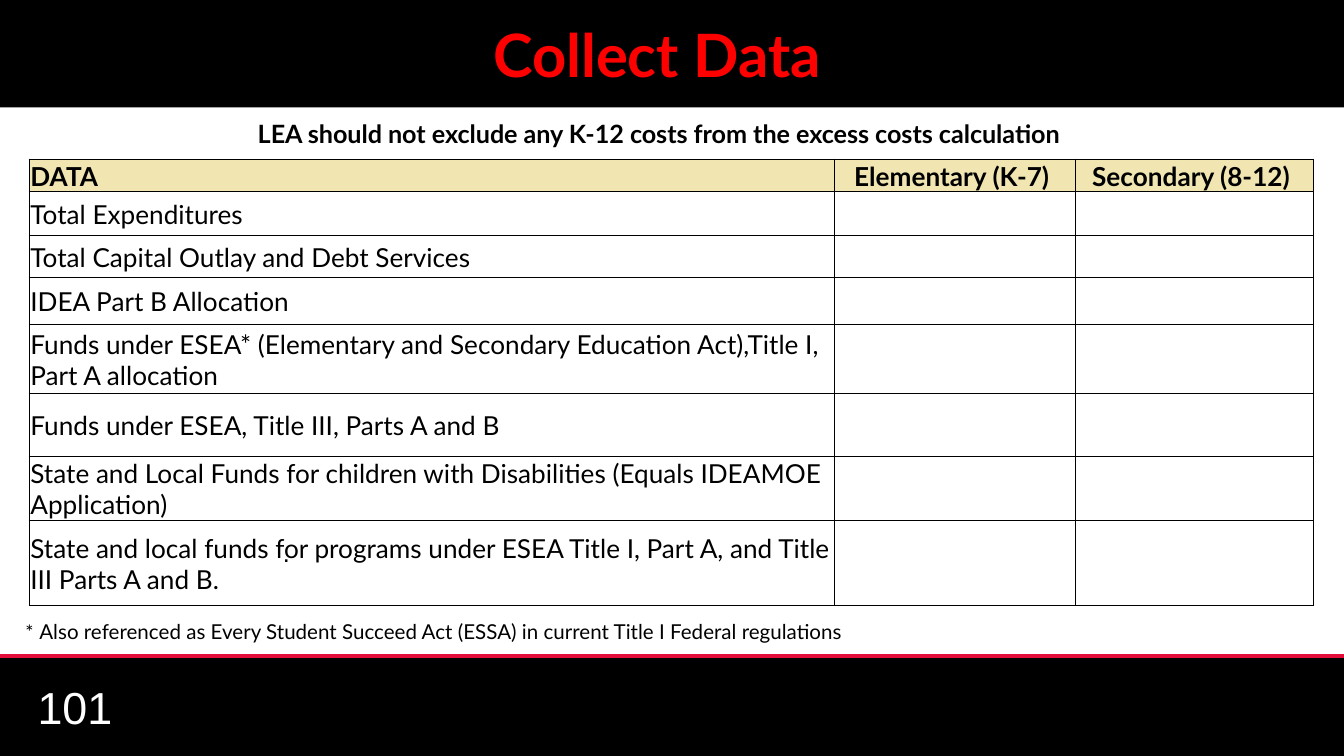
"""Build the Collect Data slide with its excess costs table."""
from lxml import etree
from pptx import Presentation
from pptx.dml.color import RGBColor
from pptx.enum.shapes import MSO_CONNECTOR, MSO_SHAPE
from pptx.enum.text import MSO_ANCHOR, PP_ALIGN
from pptx.oxml.ns import qn
from pptx.util import Pt

BLACK = RGBColor(0x00, 0x00, 0x00)
WHITE = RGBColor(0xFF, 0xFF, 0xFF)
RED = RGBColor(0xFF, 0x00, 0x00)
CRIMSON = RGBColor(0xE2, 0x0D, 0x38)
SAND = RGBColor(0xF1, 0xE6, 0xB2)
CENTER, LEFT = PP_ALIGN.CENTER, PP_ALIGN.LEFT
MIDDLE, BOTTOM, TOP = MSO_ANCHOR.MIDDLE, MSO_ANCHOR.BOTTOM, MSO_ANCHOR.TOP
RECTANGLE, STRAIGHT = MSO_SHAPE.RECTANGLE, MSO_CONNECTOR.STRAIGHT


def style(font, size, name="Lato", color=BLACK, bold=False):
    font.size = Pt(size)
    font.name = name
    font.color.rgb = color
    font.bold = bold


def add_text(slide, box, runs, size, color=BLACK, bold=False, anchor=TOP):
    frame = slide.shapes.add_textbox(*map(Pt, box)).text_frame
    frame.word_wrap = True
    frame.vertical_anchor = anchor
    for text, name in runs:
        run = frame.paragraphs[0].add_run()
        run.text = text
        style(run.font, size, name, color, bold)


prs = Presentation()
prs.slide_width, prs.slide_height = Pt(720), Pt(405)
slide = prs.slides.add_slide(prs.slide_layouts[5])

footer = slide.shapes.add_shape(RECTANGLE, Pt(0), Pt(351.5), Pt(720), Pt(53.5))
footer.shadow.inherit = False
footer.fill.solid()
footer.fill.fore_color.rgb = BLACK
footer.line.fill.background()

footer_rule = slide.shapes.add_connector(STRAIGHT, Pt(0), Pt(351.5), Pt(720), Pt(351.5))
footer_rule.line.color.rgb = CRIMSON
footer_rule.line.width = Pt(2)
etree.SubElement(footer_rule._element.spPr, qn("a:effectLst"))

add_text(slide, (13, 367.5, 168, 22), [("101", "Arial")], 24, WHITE, anchor=MIDDLE)

title = slide.shapes.title
title.left, title.top, title.width, title.height = Pt(0), Pt(0), Pt(720), Pt(57.6)
title.fill.solid()
title.fill.fore_color.rgb = BLACK
heading = title.text_frame
heading.text = "Collect Data"
heading.vertical_anchor = MIDDLE
heading.margin_left, heading.margin_right = Pt(36), Pt(52)
heading.margin_top = heading.margin_bottom = Pt(0)
heading.paragraphs[0].alignment = CENTER
style(heading.paragraphs[0].runs[0].font, 32, color=RED, bold=True)

reminder = "LEA should not exclude any K-12 costs from the excess costs calculation"
add_text(slide, (131, 60, 517, 24), [(reminder, "Lato")], 13.5, bold=True)
add_text(slide, (144.5, 284.5, 430.5, 24), [(".", "Arial")], 13.5)

column_widths = [431.5, 129, 127.5]
headers = ["DATA", "Elementary (K-7) ", "Secondary (8-12) "]
spacer = ["", "", ""]
items = [
    ("Total Expenditures", 23.5),
    ("Total Capital Outlay and Debt Services", 22.5),
    ("IDEA Part B Allocation", 25.2),
    ("Funds under ESEA* (Elementary and Secondary Education Act),Title I, Part A allocation", 37),
    ("Funds under ESEA, Title III, Parts A and B", 33.7),
    ("State and Local Funds for children with Disabilities (Equals IDEAMOE Application)", 34.3),
    ("State and local funds for programs under ESEA Title I, Part A, and Title III Parts A and B.", 45.5),
]
rows = [(spacer, 13.2), (headers, 17.2)]
rows += [([item, "", ""], height) for item, height in items]
rows += [(spacer, 23), (spacer, 8)]
header_row, last_item_row = 1, 1 + len(items)
table_height = sum(height for _, height in rows)
costs = slide.shapes.add_table(
    len(rows), len(headers), Pt(15.6), Pt(72), Pt(sum(column_widths)), Pt(table_height)
).table
for column, width in zip(costs.columns, column_widths):
    column.width = Pt(width)

for r, (texts, height) in enumerate(rows):
    costs.rows[r].height = Pt(height)
    if header_row <= r <= last_item_row:
        ruled_sides = ("a:lnL", "a:lnR", "a:lnT", "a:lnB")
    else:
        ruled_sides = {header_row - 1: ("a:lnB",), last_item_row + 1: ("a:lnT",)}.get(r, ())
    for c, text in enumerate(texts):
        cell = costs.cell(r, c)
        cell.margin_left = cell.margin_right = cell.margin_top = Pt(0.7)
        cell.margin_bottom = Pt(0)
        cell.vertical_anchor = BOTTOM if r == header_row else MIDDLE
        properties = cell._tc.get_or_add_tcPr()
        for side in ("a:lnL", "a:lnR", "a:lnT", "a:lnB"):
            border = etree.SubElement(properties, qn(side), w=str(Pt(0.5)))
            if side in ruled_sides:
                border_fill = etree.SubElement(border, qn("a:solidFill"))
                etree.SubElement(border_fill, qn("a:srgbClr"), val=str(BLACK))
            else:
                etree.SubElement(border, qn("a:noFill"))
        if r == header_row:
            cell.fill.solid()
            cell.fill.fore_color.rgb = SAND
        else:
            cell.fill.background()
        cell.text_frame.text = text
        paragraph = cell.text_frame.paragraphs[0]
        paragraph.alignment = CENTER if c else LEFT
        for run in paragraph.runs:
            style(run.font, 14, bold=r == header_row)
        if not text:
            etree.SubElement(paragraph._p, qn("a:endParaRPr"), sz="500")

footnote = "Also referenced as Every Student Succeed Act (ESSA) in current Title I Federal regulations"
add_text(slide, (6, 328, 680, 21), [("* ", "Calibri"), (footnote, "Lato")], 11)

prs.save("out.pptx")
